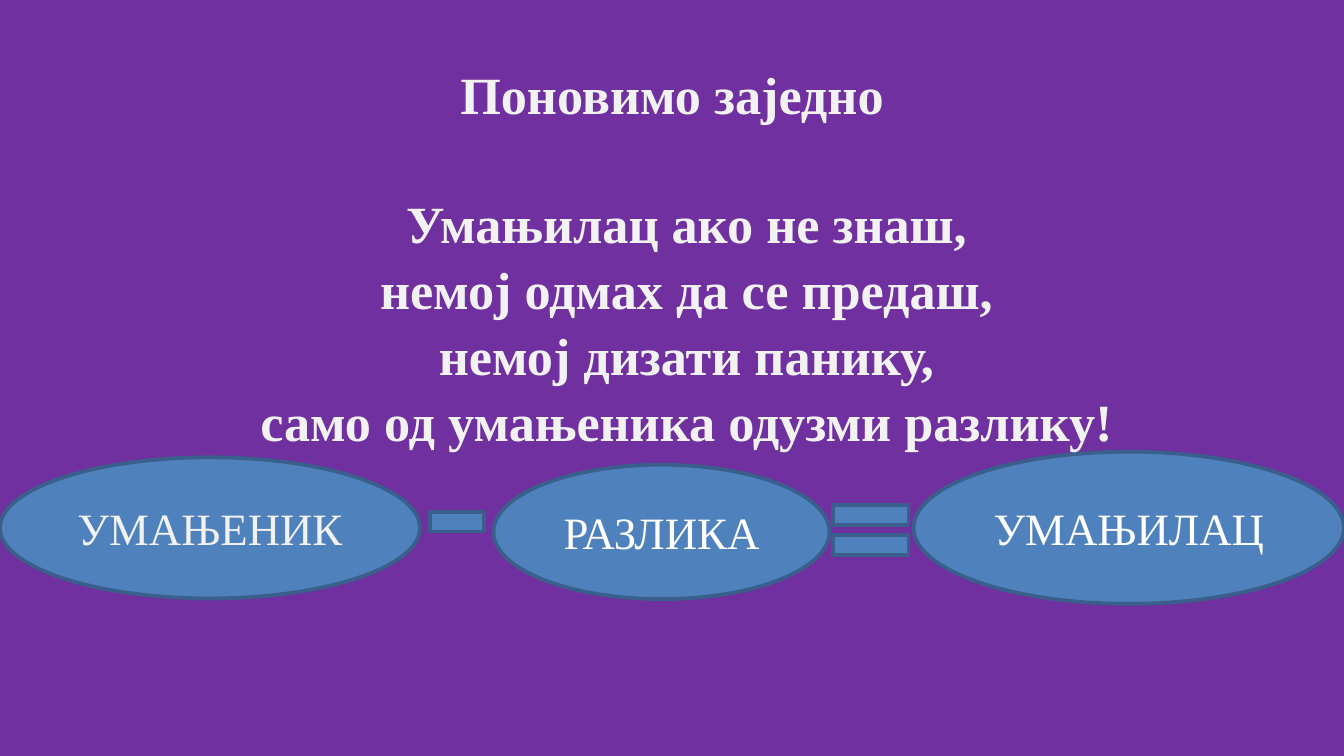
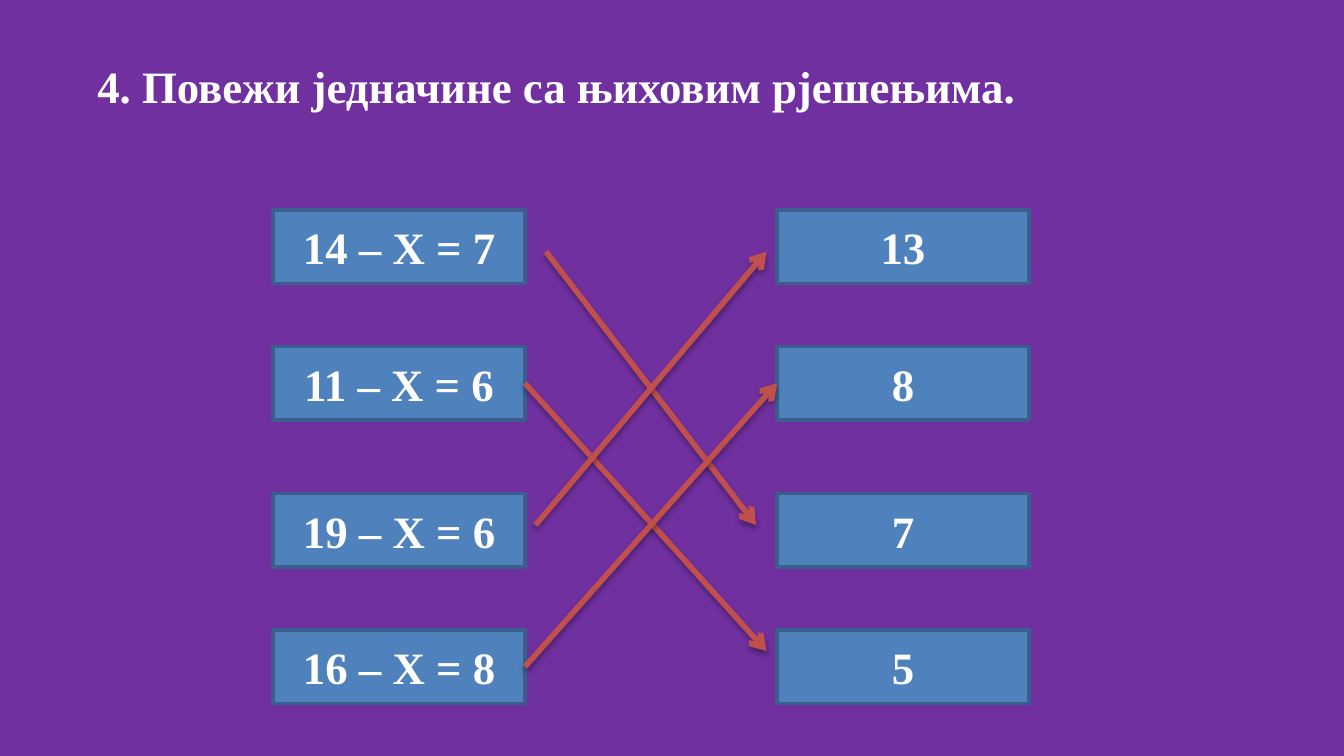
from lxml.etree import SubElement
from pptx import Presentation
from pptx.dml.color import RGBColor
from pptx.enum.shapes import MSO_CONNECTOR, MSO_SHAPE
from pptx.enum.text import MSO_ANCHOR, MSO_AUTO_SIZE, PP_ALIGN
from pptx.oxml.ns import qn
from pptx.util import Pt

FONT = "Times New Roman"
PURPLE, BLUE, EDGE, RED = "7030A0", "4F81BD", "3A5F8C", "C0504D"
WHITE, PALE = "FFFFFF", "F2F2F2"

LEFT, RIGHT, WIDE, HIGH = 146.25, 416.25, 135, 39.4
TOPS = [112.5, 185.6, 264.4, 337.5]
SUMS = ["14 – X = 7", "11 – X = 6", "19 – X = 6", "16 – X = 8"]
ANSWERS = ["13", "8", "7", "5"]


def paint(target, color):
    target.solid()
    target.fore_color.rgb = RGBColor.from_string(color)


def add_page(deck):
    slide = deck.slides.add_slide(deck.slide_layouts[6])
    paint(slide.background.fill, PURPLE)
    return slide


def write(frame, lines, size, color, bold=True, align=PP_ALIGN.CENTER, gap=None):
    for i, line in enumerate(lines):
        para = frame.add_paragraph() if i else frame.paragraphs[0]
        para.text = line
        para.alignment = align
        para.line_spacing = gap
        font = para.font
        font.name, font.size, font.bold = FONT, Pt(size), bold
        paint(font.fill, color)


def add_text(slide, box, lines, size, color, wrap=False, **style):
    frame = slide.shapes.add_textbox(*map(Pt, box)).text_frame
    frame.word_wrap = wrap
    if wrap:
        frame.vertical_anchor = MSO_ANCHOR.MIDDLE
    else:
        frame.auto_size = MSO_AUTO_SIZE.SHAPE_TO_FIT_TEXT
    write(frame, lines, size, color, **style)


def add_block(slide, kind, box, text=None, color=WHITE, bold=True):
    shape = slide.shapes.add_shape(kind, *map(Pt, box))
    shape.shadow.inherit = False
    paint(shape.fill, BLUE)
    paint(shape.line.fill, EDGE)
    shape.line.width = Pt(2)
    if text:
        shape.text_frame.vertical_anchor = MSO_ANCHOR.MIDDLE
        write(shape.text_frame, [text], 24, color, bold)
    return shape


def add_arrow(slide, start, end, source=None, target=None):
    arrow = slide.shapes.add_connector(MSO_CONNECTOR.STRAIGHT, *map(Pt, start + end))
    if source:
        arrow.begin_connect(source, 3)
    if target:
        arrow.end_connect(target, 1)
    paint(arrow.line.fill, RED)
    arrow.line.width = Pt(3)
    SubElement(arrow.line._get_or_add_ln(), qn("a:tailEnd"), type="arrow")
    effects = SubElement(arrow._element.spPr, qn("a:effectLst"))
    shade = SubElement(effects, qn("a:outerShdw"), blurRad=str(Pt(3.1)),
                       dist=str(Pt(1.8)), dir="5400000", rotWithShape="0")
    black = SubElement(shade, qn("a:srgbClr"), val="000000")
    SubElement(black, qn("a:alpha"), val="35000")


def add_column(slide, left, texts):
    return [add_block(slide, MSO_SHAPE.RECTANGLE, (left, top, WIDE, HIGH), text)
            for top, text in zip(TOPS, texts)]


def build_rule(deck):
    slide = add_page(deck)
    add_text(slide, (36, 16.5, 648, 67.5), ["Поновимо заједно"], 28, PALE, wrap=True)
    minus = add_block(slide, MSO_SHAPE.MATH_MINUS, (225, 257, 39.4, 45))
    minus.adjustments[0] = 0.235
    add_block(slide, MSO_SHAPE.MATH_EQUAL, (438.75, 261.5, 55.4, 45))
    terms = [("УМАЊЕНИК", PALE, (0, 245, 225, 75.6)),
             ("РАЗЛИКА", WHITE, (264.4, 249, 180, 72)),
             ("УМАЊИЛАЦ", WHITE, (489.4, 242, 230.6, 81.5))]
    for text, color, box in terms:
        add_block(slide, MSO_SHAPE.OVAL, box, text, color, False)
    add_text(slide, (129.5, 97.2, 476.5, 143.3),
             ["Умањилац ако не знаш,", "немој одмах да се предаш,",
              "немој дизати панику,", "само од умањеника одузми разлику!"],
             28, PALE, gap=1.05)


def build_match(deck):
    slide = add_page(deck)
    add_text(slide, (45, 28, 517, 36), ["4. Повежи једначине са њиховим рјешењима."],
             24, WHITE, align=PP_ALIGN.LEFT)
    sums = add_column(slide, LEFT, SUMS)
    answers = add_column(slide, RIGHT, ANSWERS)
    add_arrow(slide, (292.5, 134.8), (405, 281.3))
    add_arrow(slide, (281.25, 205.3), (410.6, 348.75), source=sums[1])
    add_arrow(slide, (286.9, 281.3), (410.6, 134.8))
    add_arrow(slide, (281.25, 357.2), (416.25, 205.3), sums[3], answers[1])


def main():
    deck = Presentation()
    deck.slide_width, deck.slide_height = Pt(720), Pt(405)
    build_rule(deck)
    build_match(deck)
    deck.save("out.pptx")


if __name__ == "__main__":
    main()
